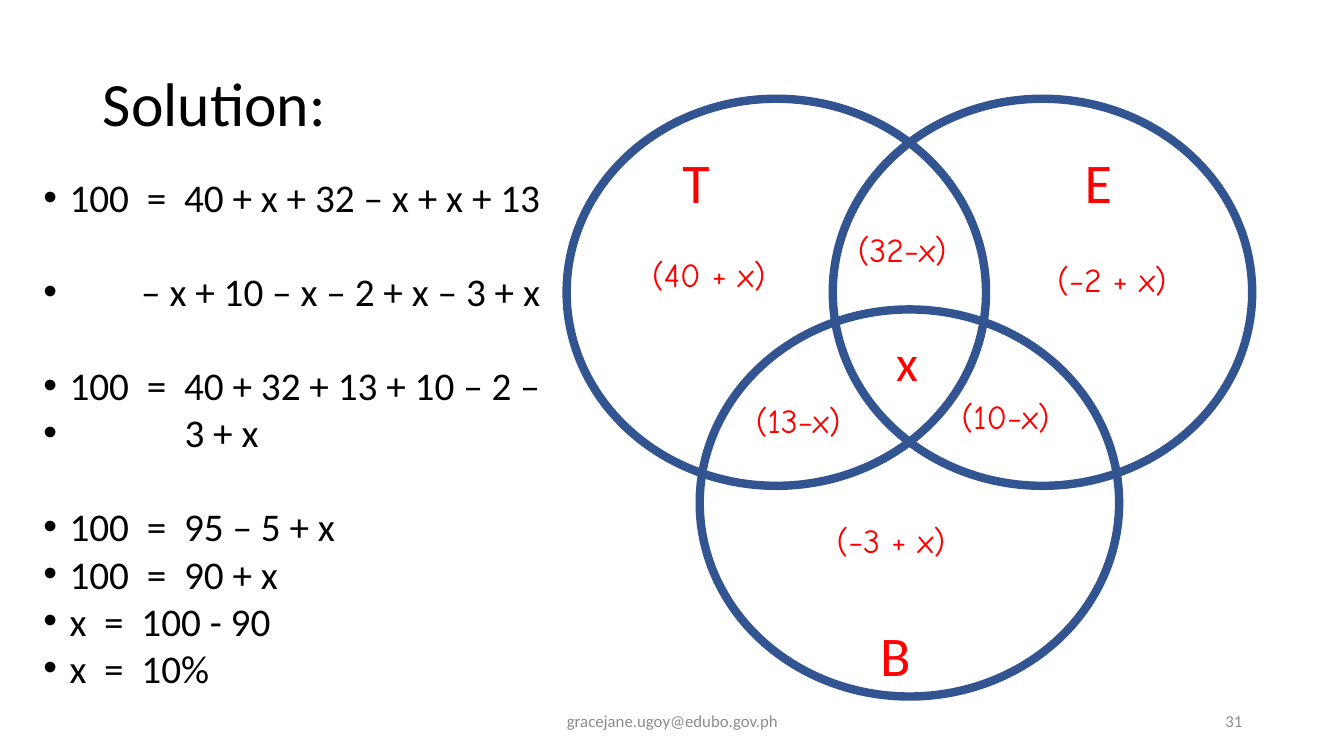
from pptx import Presentation
from pptx.dml.color import RGBColor
from pptx.enum.shapes import MSO_SHAPE as SHAPE
from pptx.enum.text import MSO_ANCHOR as ANCHOR, MSO_AUTO_SIZE as AUTO, PP_ALIGN as ALIGN
from pptx.oxml.ns import qn
from pptx.util import Inches, Pt
from lxml import etree

TEXT, RED, BLUE, GREY = "000000", "FF0000", "325491", "8C8C8C"
BODY_FONT, LABEL_FONT = "Calibri", "Comic Neue"
LINE_GAP = 33.6

# text, hanging indent in inches, space before in points
STEPS = [
    ("100  =  40 + x + 32 – x + x + 13", 0.26, 0),
    ("– x + 10 – x – 2 + x – 3 + x", 0.97, LINE_GAP),
    ("100  =  40 + 32 + 13 + 10 – 2 –", 0.26, LINE_GAP),
    ("3 + x", 1.4, 0),
    ("100  =  95 – 5 + x", 0.26, LINE_GAP),
    ("100  =  90 + x", 0.26, 0),
    ("x  =  100 - 90", 0.26, 0),
    ("x  =  10%", 0.26, 0),
]

# text, left, top, width, height, size, font; places are relative to the diagram
SET_LABELS = [
    ("x", 3.17, 2.26, 0.42, 0.71, 36, BODY_FONT),
    ("T", 1.05, 0.43, 0.48, 0.77, 40, BODY_FONT),
    ("E", 5.04, 0.43, 0.48, 0.77, 40, BODY_FONT),
    ("B", 3.01, 5.13, 0.51, 0.77, 40, BODY_FONT),
    ("(32−x)", 2.79, 1.24, 1.22, 0.5, 24, LABEL_FONT),
    ("(10−x)", 3.82, 2.9, 1.16, 0.5, 24, LABEL_FONT),
    ("(13−x)", 1.78, 2.94, 1.16, 0.5, 24, LABEL_FONT),
    ("(40 + x)", 0.75, 1.49, 1.42, 0.5, 24, LABEL_FONT),
    ("(−2 + x)", 4.77, 1.54, 1.37, 0.5, 24, LABEL_FONT),
    ("(−3 + x)", 2.58, 4.13, 1.37, 0.5, 24, LABEL_FONT),
]


def rgb(color):
    return RGBColor.from_string(color)


def place(sp, *box):
    for name, value in zip(("left", "top", "width", "height"), box):
        setattr(sp, name, Inches(value))


def set_format(obj, **values):
    for name, value in values.items():
        setattr(obj, name, value)


def write(p, text, size, color, font=BODY_FONT, **paragraph):
    r = p.add_run()
    r.text = text
    set_format(r.font, size=Pt(size), name=font)
    r.font.color.rgb = rgb(color)
    set_format(p, **paragraph)


def add_text(slide, text, box, size, color, font=BODY_FONT, wrap=True,
             anchor=ANCHOR.TOP, align=ALIGN.LEFT):
    sp = slide.shapes.add_textbox(*map(Inches, box))
    set_format(sp.text_frame, word_wrap=wrap, vertical_anchor=anchor)
    write(sp.text_frame.paragraphs[0], text, size, color, font, alignment=align)


def add_bullet(p, indent):
    """Put the bullet at the frame's edge and hang the text at the indent."""
    pPr = p._p.get_or_add_pPr()
    pPr.set("marL", str(Inches(indent)))
    pPr.set("indent", str(-Inches(indent)))
    etree.SubElement(pPr, qn("a:buFont"), typeface="Arial")
    etree.SubElement(pPr, qn("a:buChar"), char="•")


def fill_title(sp, text, box):
    place(sp, *box)
    tf = sp.text_frame
    set_format(tf, vertical_anchor=ANCHOR.MIDDLE, auto_size=AUTO.NONE)
    write(tf.paragraphs[0], text, 44, TEXT, alignment=ALIGN.LEFT, line_spacing=0.9)


def fill_steps(sp, steps, box):
    place(sp, *box)
    tf = sp.text_frame
    set_format(tf, vertical_anchor=ANCHOR.TOP, auto_size=AUTO.NONE, word_wrap=True)
    for i, (text, indent, gap) in enumerate(steps):
        p = tf.add_paragraph() if i else tf.paragraphs[0]
        write(p, text, 28, TEXT, space_before=Pt(gap), space_after=Pt(0), line_spacing=1.0)
        add_bullet(p, indent)


def add_venn(slide, left, top):
    width, height, step, drop = 4.16, 3.84, 1.32, 2.09
    for dx, dy in ((0, 0), (2 * step, 0), (step, drop)):
        sp = slide.shapes.add_shape(
            SHAPE.OVAL, *map(Inches, (left + dx, top + dy, width, height)))
        sp.shadow.inherit = False
        sp.fill.background()
        sp.line.color.rgb = rgb(BLUE)
        sp.line.width = Pt(6)
    for text, dx, dy, w, h, size, font in SET_LABELS:
        add_text(slide, text, (left + dx, top + dy, w, h), size, RED, font, wrap=False)


def add_footer(slide, top, height=0.4):
    for text, left, width, align in (
            ("gracejane.ugoy@edubo.gov.ph", 4.42, 4.5, ALIGN.CENTER),
            ("31", 9.42, 3, ALIGN.RIGHT)):
        add_text(slide, text, (left, top, width, height), 12, GREY,
                 anchor=ANCHOR.MIDDLE, align=align)


def main():
    prs = Presentation()
    set_format(prs, slide_width=Inches(13.33), slide_height=Inches(7.5))
    slide = prs.slides.add_slide(prs.slide_layouts[1])
    fill_title(slide.shapes.title, "Solution:", (0.92, 0.4, 11.5, 1.32))
    add_venn(slide, 5.62, 0.98)
    fill_steps(slide.placeholders[1], STEPS, (0.33, 1.67, 5.39, 5.24))
    add_footer(slide, 6.95)
    prs.save("out.pptx")


if __name__ == "__main__":
    main()
